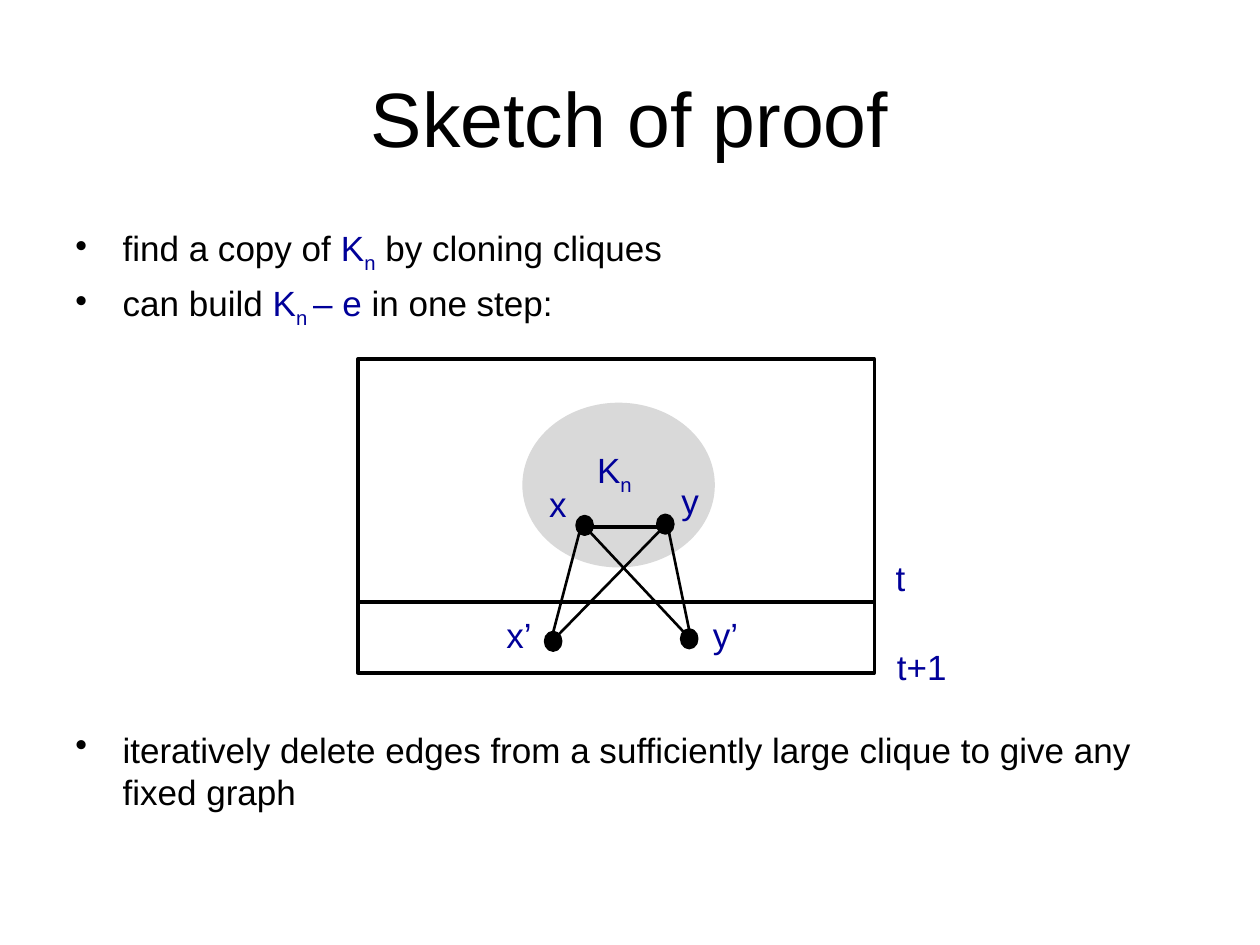
from lxml import etree
from pptx import Presentation
from pptx.dml.color import RGBColor
from pptx.enum.shapes import MSO_CONNECTOR, MSO_SHAPE
from pptx.enum.text import MSO_ANCHOR, MSO_AUTO_SIZE, PP_ALIGN
from pptx.oxml.ns import qn
from pptx.util import Inches, Pt

RECT, OVAL = MSO_SHAPE.RECTANGLE, MSO_SHAPE.OVAL
STRAIGHT = MSO_CONNECTOR.STRAIGHT
MIDDLE, CENTER = MSO_ANCHOR.MIDDLE, PP_ALIGN.CENTER
FIT_SHAPE = MSO_AUTO_SIZE.SHAPE_TO_FIT_TEXT

THEME = {
    "font": "Arial",
    "title": Pt(44),
    "body": Pt(20),
    "ink": RGBColor(0x00, 0x00, 0x00),
    "math": RGBColor(0x00, 0x00, 0x99),
    "clique": RGBColor(0xD9, 0xD9, 0xD9),
    "outline": Pt(2),
    "heavy": Pt(2.25),
    "edge": Pt(1.5),
}

prs = Presentation()
prs.slide_width, prs.slide_height = Inches(10), Inches(7.5)
s = prs.slides.add_slide(prs.slide_layouts[6])
CELL = prs.slide_width / 100  # square grid of 100 columns and 75 rows


def grid(*cells):
    return [round(c * CELL) for c in cells]


def write(p, runs, size=THEME["body"]):
    """Fill a paragraph from (text, colour name, is subscript) runs."""
    p.font.name, p.font.size = THEME["font"], size
    for text, color, subscript in runs:
        r = p.add_run()
        r.text = text
        r.font.color.rgb = THEME[color]
        if subscript:
            r.font._element.set("baseline", "-25000")


# Title
tf = s.shapes.add_textbox(*grid(5, 3, 90, 12.5)).text_frame
tf.word_wrap = True
tf.vertical_anchor = MIDDLE
tf.paragraphs[0].alignment = CENTER
write(tf.paragraphs[0], [("Sketch of proof", "ink", False)], THEME["title"])

# Bullets; the last one clears the diagram with its space before
bullets = [
    (4, [("find a copy of ", "ink", False), ("K", "math", False),
         ("n", "math", True), (" by cloning cliques", "ink", False)]),
    (4, [("can build ", "ink", False), ("K", "math", False),
         ("n ", "math", True), ("– e ", "math", False),
         ("in one step:", "ink", False)]),
    (228, [("iteratively delete edges from a sufficiently large clique "
            "to give any fixed graph", "ink", False)]),
]
indent = grid(3.75)[0]
tf = s.shapes.add_textbox(*grid(5, 17.5, 90, 49.5)).text_frame
tf.word_wrap = True
for i, (space, runs) in enumerate(bullets):
    p = tf.add_paragraph() if i else tf.paragraphs[0]
    p.space_before = Pt(space)
    write(p, runs)
    pPr = p._p.get_or_add_pPr()
    pPr.set("marL", str(indent))
    pPr.set("indent", str(-indent))
    bullet = etree.Element(qn("a:buChar"), char="•")
    pPr.find(qn("a:defRPr")).addprevious(bullet)

# Frame, clique and vertices
vertices = [(52.2, 40.9), (45.8, 41), (43.3, 50.2), (54.1, 50)]
shapes = [
    (RECT, (28.4, 28.5, 41, 24.9), None, "ink"),
    (OVAL, (41.6, 32.1, 15, 12.8), "clique", "clique"),
] + [(OVAL, (*v, 1.2, 1.4), "ink", "ink") for v in vertices]
for kind, box, fill, line in shapes:
    sp = s.shapes.add_shape(kind, *grid(*box))
    sp.shadow.inherit = False
    if fill:
        sp.fill.solid()
        sp.fill.fore_color.rgb = THEME[fill]
    else:
        sp.fill.background()
    sp.line.color.rgb = THEME[line]
    sp.line.width = THEME["outline"]

# Time divider and graph edges
lines = [
    ((28.3, 47.8, 69.5, 47.8), "heavy"),
    ((46.2, 41.8, 52.9, 41.8), "heavy"),
    ((43.9, 50.2, 46, 42.2), "edge"),
    ((54.7, 50, 53, 41.8), "edge"),
    ((44.3, 50.4, 52.4, 42.1), "edge"),
    ((54.3, 50.2, 46.8, 42.2), "edge"),
]
for ends, weight in lines:
    edge = s.shapes.add_connector(STRAIGHT, *grid(*ends))
    edge.line.color.rgb = THEME["ink"]
    edge.line.width = THEME[weight]
    etree.SubElement(edge._element.spPr, qn("a:effectLst"))

# Labels
labels = [
    (46.4, 35.1, 4.9, "K", "n"),
    (70.1, 43.7, 2.8, "t", ""),
    (70.2, 50.7, 6, "t+1", ""),
    (42.6, 37.8, 3.4, "x", ""),
    (53.1, 37.6, 3.4, "y", ""),
    (39.2, 48.2, 4.1, "x’", ""),
    (55.6, 48.2, 4.1, "y’", ""),
]
for col, row, width, text, sub in labels:
    tf = s.shapes.add_textbox(*grid(col, row, width, 4.4)).text_frame
    tf.word_wrap = False
    tf.auto_size = FIT_SHAPE
    runs = [(text, "math", False)]
    if sub:
        runs.append((sub, "math", True))
    write(tf.paragraphs[0], runs)

prs.save("out.pptx")
